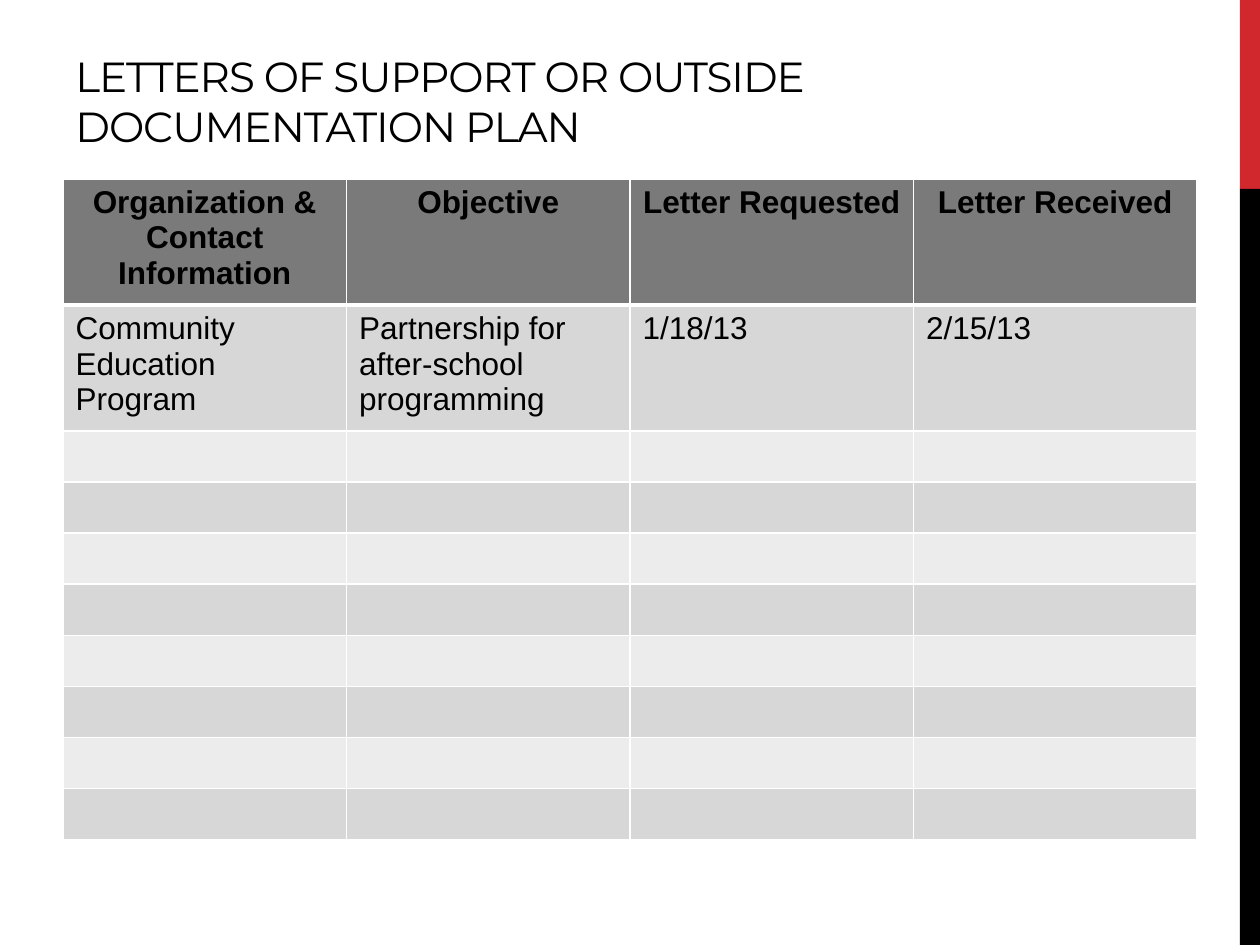
from dataclasses import dataclass

from lxml.etree import SubElement
from pptx import Presentation
from pptx.dml.color import RGBColor
from pptx.enum.shapes import MSO_SHAPE
from pptx.enum.text import MSO_ANCHOR, PP_ALIGN
from pptx.oxml.ns import qn
from pptx.slide import Slide
from pptx.table import _Cell
from pptx.util import Pt

BLACK, WHITE, RED = "000000", "FFFFFF", "D1282E"
HEADER_GRAY, DARK_BAND, LIGHT_BAND = "7A7A7A", "D7D7D7", "ECECEC"

HEADINGS = ["Organization & Contact Information", "Objective",
            "Letter Requested", "Letter Received"]
ENTRIES = [["Community Education Program",
            "Partnership for after-school programming",
            "1/18/13", "2/15/13"]]
EMPTY_ROWS = 8
COLUMN_WIDTH, TALL_ROW, SHORT_ROW = 162, 72, 29.2


@dataclass
class Box:
    left: float
    top: float
    width: float
    height: float

    def lengths(self) -> list:
        return [Pt(value) for value in (self.left, self.top, self.width, self.height)]


@dataclass
class Bar:
    box: Box
    color: str


@dataclass
class RowStyle:
    fill: str
    bold: bool
    alignment: PP_ALIGN
    top_line: float
    bottom_line: float


BARS = [Bar(Box(708.5, 0, 11.5, 108), RED),
        Bar(Box(708.5, 108, 11.5, 432), BLACK)]


def rgb(color: str) -> RGBColor:
    return RGBColor.from_string(color)


def set_font(font, **format_values) -> None:
    for name, value in format_values.items():
        setattr(font, name, value)
    font.color.rgb = rgb(BLACK)


def add_bar(slide: Slide, bar: Bar) -> None:
    shape = slide.shapes.add_shape(MSO_SHAPE.RECTANGLE, *bar.box.lengths())
    shape.shadow.inherit = False
    shape.fill.solid()
    shape.fill.fore_color.rgb = rgb(bar.color)
    shape.line.fill.background()


def add_title(slide: Slide, text: str) -> None:
    frame = slide.shapes.add_textbox(*Box(36, 0, 648, 90).lengths()).text_frame
    frame.word_wrap = True
    frame.vertical_anchor = MSO_ANCHOR.BOTTOM
    run = frame.paragraphs[0].add_run()
    run.text = text
    set_font(run.font, name="Montserrat", size=Pt(24))
    run.font._element.set("spc", "-60")


def set_borders(cell: _Cell, style: RowStyle) -> None:
    """Draw the white lines; call before the fill, which must follow them in the XML."""
    widths = {"lnL": 1, "lnR": 1, "lnT": style.top_line, "lnB": style.bottom_line}
    properties = cell._tc.get_or_add_tcPr()
    for tag, width in widths.items():
        line = SubElement(properties, qn(f"a:{tag}"), w=str(Pt(width)))
        fill = SubElement(line, qn("a:solidFill"))
        SubElement(fill, qn("a:srgbClr"), val=WHITE)


def fill_cell(cell: _Cell, text: str, style: RowStyle) -> None:
    set_borders(cell, style)
    cell.fill.solid()
    cell.fill.fore_color.rgb = rgb(style.fill)
    paragraph = cell.text_frame.paragraphs[0]
    paragraph.alignment = style.alignment
    font_values = {"name": "Arial", "size": Pt(18), "bold": style.bold}
    if text:
        run = paragraph.add_run()
        run.text = text
        set_font(run.font, **font_values)


def row_style(index: int) -> RowStyle:
    if index == 0:
        return RowStyle(HEADER_GRAY, True, PP_ALIGN.CENTER, 1, 3)
    band = DARK_BAND if index % 2 else LIGHT_BAND
    return RowStyle(band, False, PP_ALIGN.LEFT, 3 if index == 1 else 1, 1)


def add_plan_table(slide: Slide) -> None:
    rows = [HEADINGS, *ENTRIES] + [[""] * len(HEADINGS)] * EMPTY_ROWS
    heights = [TALL_ROW if any(row) else SHORT_ROW for row in rows]
    box = Box(36, 102.2, COLUMN_WIDTH * len(HEADINGS), sum(heights))
    table = slide.shapes.add_table(len(rows), len(HEADINGS), *box.lengths()).table
    for column in table.columns:
        column.width = Pt(COLUMN_WIDTH)
    for index, (texts, height) in enumerate(zip(rows, heights)):
        table.rows[index].height = Pt(height)
        for cell, text in zip(table.rows[index].cells, texts):
            fill_cell(cell, text, row_style(index))


def main() -> None:
    presentation = Presentation()
    presentation.slide_width, presentation.slide_height = Pt(720), Pt(540)
    slide = presentation.slides.add_slide(presentation.slide_layouts[6])
    for bar in BARS:
        add_bar(slide, bar)
    add_title(slide, "LETTERS OF SUPPORT OR OUTSIDE DOCUMENTATION PLAN")
    add_plan_table(slide)
    presentation.save("out.pptx")


if __name__ == "__main__":
    main()
